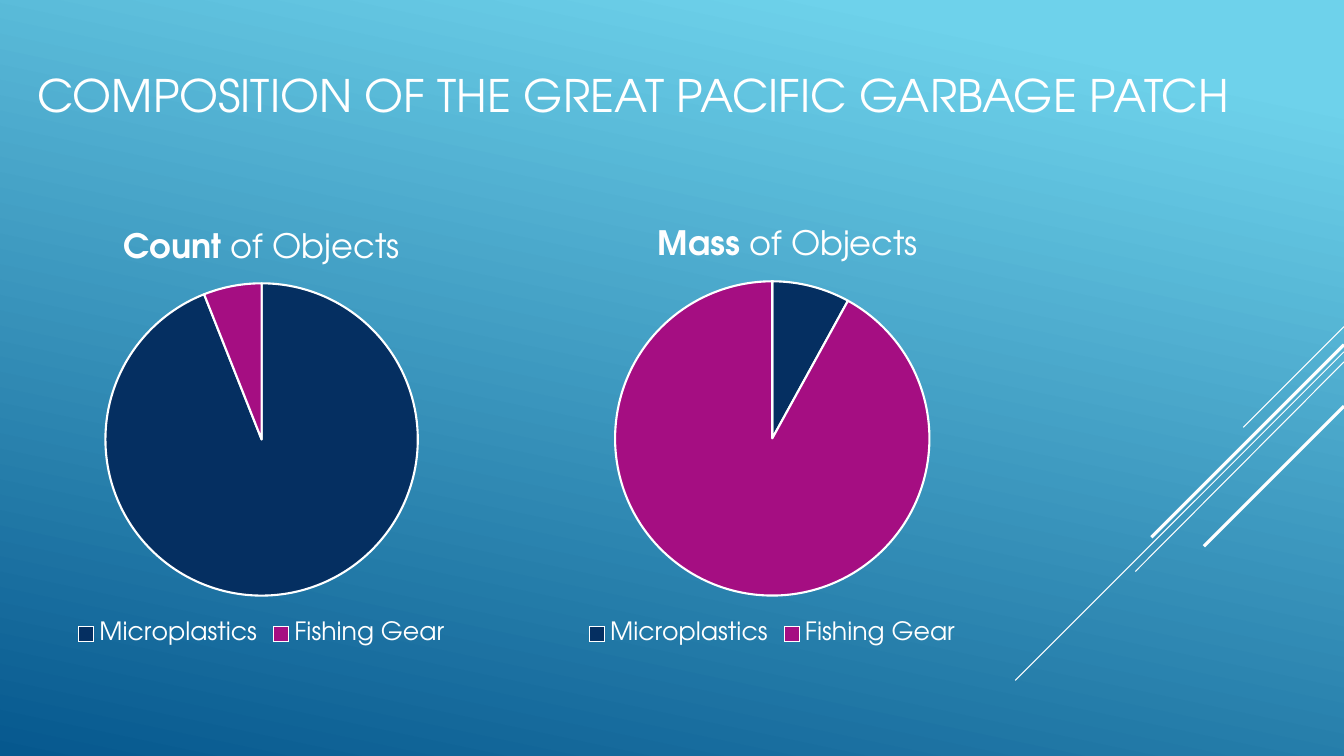
from lxml import etree
from pptx import Presentation
from pptx import util as u
from pptx.chart.data import CategoryChartData
from pptx.dml.color import RGBColor
from pptx.enum import chart as ch, shapes, text
from pptx.oxml import parse_xml
from pptx.oxml.ns import nsdecls, qn

FONT = "TeX Gyre Adventor"
WHITE, NAVY, PURPLE = "FFFFFF", "052F61", "A50E82"


def rgb(code):
    """Turn a hex string into a colour."""
    return RGBColor.from_string(code)


def style(font, size, bold=False):
    """Set the white slide font at a size in points."""
    font.name, font.size, font.bold = FONT, u.Pt(size), bold
    font.color.rgb = rgb(WHITE)


def add_background(s):
    """Fill the background with a light to dark blue gradient."""
    fill = s.background.fill
    fill.gradient()
    fill.gradient_angle = 258
    for stop, position, code in zip(fill.gradient_stops, (0.1, 1), ("6ED2EB", "06588E")):
        stop.position = position
        stop.color.rgb = rgb(code)


def add_diagonal(s, right_y, left_x, left_y, width):
    """Draw a white line from the right slide edge down to the left."""
    line = s.shapes.add_connector(
        shapes.MSO_CONNECTOR.STRAIGHT, u.Inches(13.33), u.Inches(right_y),
        u.Inches(left_x), u.Inches(left_y))
    line.line.color.rgb = rgb(WHITE)
    line.line.width = u.Pt(width)
    etree.SubElement(line._element.spPr, qn("a:effectLst"))


def add_title(s, words):
    """Place and format the title placeholder."""
    sp = s.shapes.title
    sp.left, sp.top = u.Inches(0.27), u.Inches(0.11)
    sp.width, sp.height = u.Inches(13.33), u.Inches(1.65)
    tf = sp.text_frame
    tf.word_wrap = True
    tf.vertical_anchor = text.MSO_ANCHOR.MIDDLE
    p = tf.paragraphs[0]
    p.alignment = text.PP_ALIGN.LEFT
    r = p.add_run()
    r.text = words
    style(r.font, 32)


def add_pie(s, box, measure, values, title_at=None):
    """Add a pie of the two kinds of waste with a part-bold title."""
    data = CategoryChartData()
    data.categories = ["Microplastics", "Fishing Gear"]
    data.add_series("Series 1", values)
    chart = s.shapes.add_chart(
        ch.XL_CHART_TYPE.PIE, *(u.Inches(n) for n in box), data).chart
    style(chart.font, 10)

    chart.has_title = True
    p = chart.chart_title.text_frame.paragraphs[0]
    for words, bold in ((measure, True), (" of Objects", False)):
        r = p.add_run()
        r.text = words
        style(r.font, 24, bold)
    chart.chart_title.include_in_layout = False
    if title_at:
        x, y = title_at
        layout = parse_xml(
            f'<c:layout {nsdecls("c")}><c:manualLayout><c:xMode val="edge"/>'
            f'<c:yMode val="edge"/><c:x val="{x}"/><c:y val="{y}"/>'
            '</c:manualLayout></c:layout>')
        title = chart.chart_title._element
        for old in title.findall(qn("c:layout")):
            title.remove(old)
        title.find(qn("c:tx")).addnext(layout)

    chart.has_legend = True
    chart.legend.position = ch.XL_LEGEND_POSITION.BOTTOM
    chart.legend.include_in_layout = False
    style(chart.legend.font, 18)

    plot = chart.plots[0]
    plot.vary_by_categories = True
    for i, code in enumerate((NAVY, PURPLE)):
        fmt = plot.series[0].points[i].format
        fmt.fill.solid()
        fmt.fill.fore_color.rgb = rgb(code)
        fmt.line.color.rgb = rgb(WHITE)
        fmt.line.width = u.Pt(1.5)


def main():
    """Build the slide and save it."""
    prs = Presentation()
    prs.slide_width, prs.slide_height = u.Inches(13.33), u.Inches(7.5)
    s = prs.slides.add_slide(prs.slide_layouts[5])
    add_background(s)
    for diagonal in (
        (3.24, 12.33, 4.24, 0.75),
        (3.49, 10.07, 6.75, 0.75),
        (3.59, 11.26, 5.67, 0.75),
        (3.42, 11.42, 5.33, 2.25),
        (4.03, 11.94, 5.42, 2.25),
    ):
        add_diagonal(s, *diagonal)
    add_title(s, "COMPOSITION OF THE GREAT PACIFIC GARBAGE PATCH")
    add_pie(s, (5.33, 2.1, 4.66, 4.36), "Mass", (8, 92), title_at=(0.25, 0.03))
    add_pie(s, (0.27, 2.12, 4.65, 4.34), "Count", (94, 6))
    prs.save("out.pptx")


if __name__ == "__main__":
    main()
